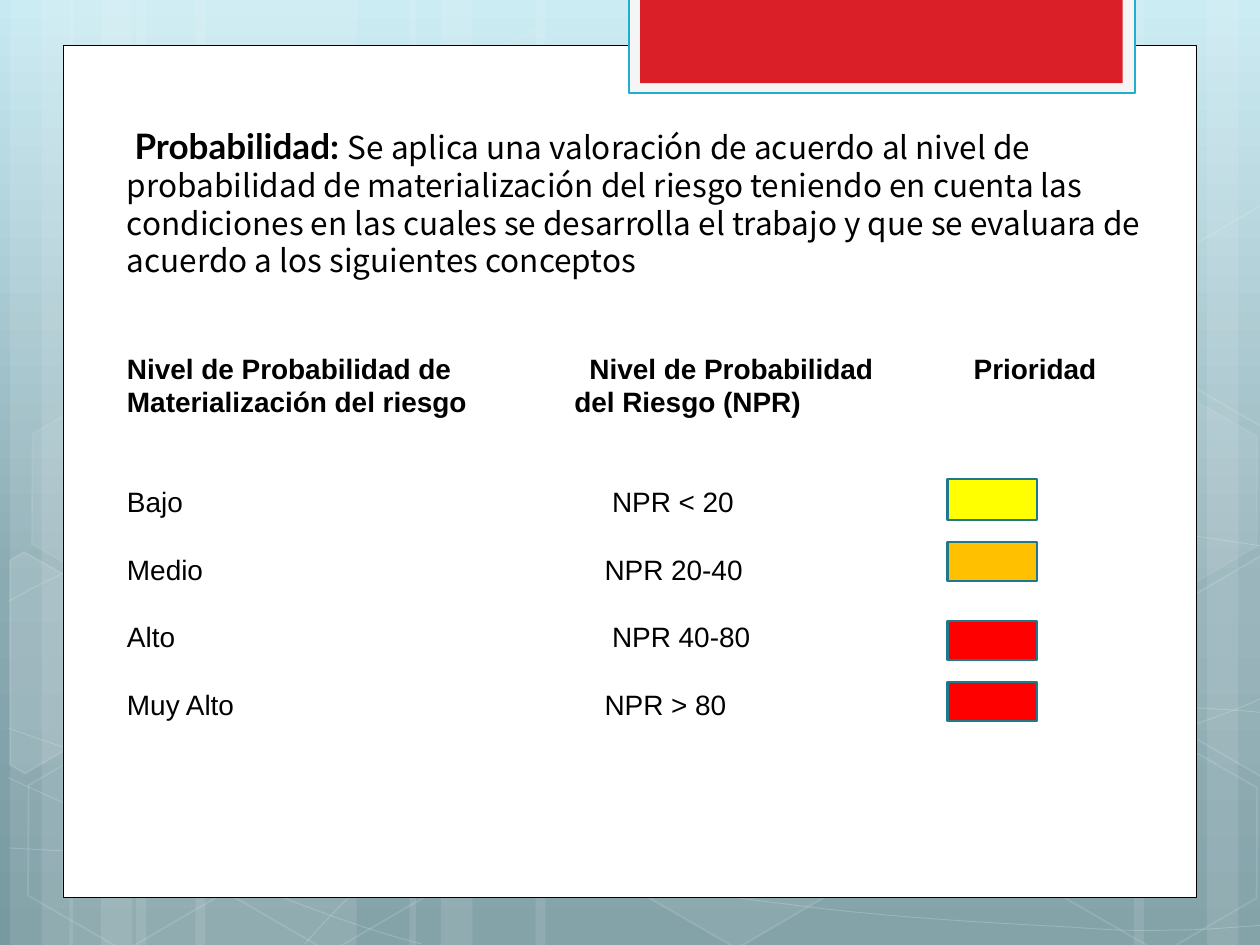
from copy import deepcopy
from typing import NamedTuple, Optional

from lxml import etree
from pptx import Presentation
from pptx.dml.color import RGBColor
from pptx.enum.shapes import MSO_SHAPE
from pptx.oxml.ns import qn
from pptx.util import Inches, Pt

RECTANGLE = MSO_SHAPE.RECTANGLE
HEXAGON = MSO_SHAPE.HEXAGON

WHITE = RGBColor(0xFF, 0xFF, 0xFF)
BLACK = RGBColor(0, 0, 0)
LIGHT_GRAY = RGBColor(0xF5, 0xF5, 0xF5)
CYAN = RGBColor(0x1F, 0xAE, 0xCD)
TEAL = RGBColor(0x21, 0x78, 0x8D)
CRIMSON = RGBColor(0xDA, 0x1F, 0x28)
YELLOW = RGBColor(0xFF, 0xFF, 0)
AMBER = RGBColor(0xFF, 0xC0, 0)
RED = RGBColor(0xFF, 0, 0)
BACKGROUND_STOPS = [
    (0, RGBColor(0xC7, 0xEA, 0xF2)),
    (0.62, RGBColor(0x8B, 0xAB, 0xB3)),
    (1, RGBColor(0x77, 0x99, 0xA0)),
]


class Paint(NamedTuple):
    fill: Optional[RGBColor] = None
    fill_opacity: int = 100
    line: Optional[RGBColor] = None
    line_width: float = 1
    line_opacity: int = 100


class Box(NamedTuple):
    left: float
    top: float
    width: float
    height: float
    paint: Paint


class Hexagon(NamedTuple):
    left: float
    top: float
    fill_opacity: int
    line_opacity: int


class CutHexagon(NamedTuple):
    points: list
    fill_opacity: int


class Row(NamedTuple):
    cells: tuple
    tabs: tuple
    space_before: float
    bold: bool = False


BAR_PAINT = Paint(WHITE, 10)
BARS = [
    (1.08, 1.75), (0.08, 0.5), (0.33, 0.83), (1.55, 1.75), (0.55, 0.5), (0.8, 0.83),
    (7.33, 1.75), (9.58, 0.5), (9, 0.83), (4.25, 3.08), (3.25, 0.5), (3.5, 0.83),
]
CURVE_PAINT = Paint(line=WHITE, line_width=0.5, line_opacity=20)
CURVES = [
    [(0.07, 6.73), (0.61, 6.76), (1.15, 6.79), (1.9, 6.78), (2.65, 6.77), (3.58, 6.75),
     (4.58, 6.65), (5.58, 6.55), (7, 6.36), (7.92, 6.17), (8.83, 5.98), (9.77, 5.68),
     (10.07, 5.51)],
    [(0.07, 4.77), (0.36, 4.61), (0.65, 4.46), (1.21, 4.31), (1.78, 4.16), (2.59, 3.94),
     (3.47, 3.87), (4.36, 3.8), (5.44, 3.79), (6.54, 3.87), (7.64, 3.95), (9.47, 4.26),
     (10.07, 4.34)],
    [(0.06, 6.17), (1.27, 6.72), (2.47, 7.27), (3.34, 7.49)],
    [(0.07, 5.78), (0.38, 5.89), (0.7, 6), (1.28, 6.16), (1.86, 6.31), (2.73, 6.56),
     (3.57, 6.73), (4.4, 6.9), (5.45, 7.08), (6.28, 7.18), (7.11, 7.29), (8, 7.33),
     (8.53, 7.36), (9.05, 7.4), (9.19, 7.38), (9.45, 7.38), (9.71, 7.37), (9.89, 7.35),
     (10.07, 7.34)],
    [(2.42, 7.49), (2.6, 7.29), (2.78, 7.09), (3.02, 6.91), (3.26, 6.73), (3.6, 6.53),
     (3.88, 6.39), (4.16, 6.25), (4.33, 6.19), (4.7, 6.09), (5.06, 5.99), (5.73, 5.85),
     (6.08, 5.78), (6.44, 5.71), (6.49, 5.71), (6.8, 5.69), (7.11, 5.66), (7.6, 5.63),
     (7.94, 5.62), (8.29, 5.61), (8.86, 5.62), (8.86, 5.62), (9.08, 5.62), (9.31, 5.62),
     (9.53, 5.62), (9.71, 5.63), (9.88, 5.64), (10.06, 5.66)],
]
HEXAGONS = [
    Hexagon(3.34, 0.36, 4, 8), Hexagon(4.97, 5.89, 6, 12), Hexagon(0.11, 5.91, 0, 12),
    Hexagon(0.14, 3.12, 7, 8), Hexagon(1.74, 5.92, 0, 12), Hexagon(7.53, 4.53, 10, 12),
    Hexagon(8.34, 5.93, 0, 12), Hexagon(8.34, 3.14, 7, 8),
]
CUT_HEXAGONS = [
    CutHexagon([(0.08, 4.45), (0.19, 4.38), (0.96, 4.82), (0.95, 5.7), (0.2, 6.14),
                (0.08, 6.07)], 10),
    CutHexagon([(9.26, 4.85), (10.01, 4.41), (10.09, 4.46), (10.09, 6.13), (10.02, 6.17),
                (9.26, 5.73)], 4),
    CutHexagon([(9.26, 2.07), (10.01, 1.63), (10.1, 1.68), (10.09, 3.35), (10.02, 3.39),
                (9.26, 2.95)], 0),
]
PANELS = [
    Box(0.5, 0.36, 9, 6.76, Paint(WHITE, line=BLACK, line_width=0.5)),
    Box(4.99, -0.02, 4.02, 0.76, Paint(LIGHT_GRAY, line=CYAN, line_width=1.25)),
    Box(5.08, -0.02, 3.83, 0.68, Paint(CRIMSON)),
]
PRIORITIES = [(3.8, 0.33, YELLOW), (4.3, 0.31, AMBER), (4.93, 0.31, RED), (5.41, 0.31, RED)]
INTRO = [
    ("Probabilidad: ", "Lato", 20, True),
    ("Se aplica una valoración de acuerdo al nivel de probabilidad de materialización del "
     "riesgo teniendo en cuenta las condiciones en las cuales se desarrolla el trabajo y que "
     "se evaluara de acuerdo a los siguientes conceptos", "Noto Sans CJK KR", 18, False),
]
ROWS = [
    Row(("Nivel de Probabilidad de", "Nivel de Probabilidad", "Prioridad"),
        (3.67, 6.72), 41.2, True),
    Row(("Materialización del riesgo", "del Riesgo (NPR)"), (3.55,), 0, True),
    Row(("Bajo", "NPR < 20"), (3.85,), 38),
    Row(("Medio", "NPR 20-40"), (3.79,), 19.25),
    Row(("Alto", "NPR 40-80"), (3.85,), 19.25),
    Row(("Muy Alto", "NPR > 80"), (3.79,), 19.25),
]


def set_opacity(parent, percent: int) -> None:
    if percent < 100:
        color = parent.find(qn("a:solidFill")).find(qn("a:srgbClr"))
        etree.SubElement(color, qn("a:alpha")).set("val", str(percent * 1000))


def apply_paint(shape, paint: Paint) -> None:
    shape.shadow.inherit = False
    properties = shape._element.spPr
    if paint.fill is None or paint.fill_opacity == 0:
        shape.fill.background()
    else:
        shape.fill.solid()
        shape.fill.fore_color.rgb = paint.fill
        set_opacity(properties, paint.fill_opacity)
    if paint.line is None:
        shape.line.fill.background()
    else:
        shape.line.color.rgb = paint.line
        shape.line.width = Pt(paint.line_width)
        set_opacity(properties.find(qn("a:ln")), paint.line_opacity)


def draw_box(slide, box: Box, preset=RECTANGLE):
    shape = slide.shapes.add_shape(preset, *(Inches(length) for length in box[:4]))
    apply_paint(shape, box.paint)
    return shape


def draw_outline(slide, points: list, paint: Paint, close: bool):
    corners = [(Inches(x), Inches(y)) for x, y in points]
    builder = slide.shapes.build_freeform(*corners[0], scale=1.0)
    builder.add_line_segments(corners[1:], close=close)
    shape = builder.convert_to_shape()
    apply_paint(shape, paint)
    return shape


def draw_curve(slide, controls: list) -> None:
    shape = draw_outline(slide, controls, CURVE_PAINT, False)
    segments = list(shape._element.iter(qn("a:lnTo")))
    for start in range(0, len(segments), 3):
        outline = segments[start].getparent()
        curve = etree.SubElement(outline, qn("a:cubicBezTo"))
        for segment in segments[start:start + 3]:
            curve.append(segment[0])
            outline.remove(segment)


def fill_background(master) -> None:
    fill = master.background.fill
    fill.gradient()
    fill.gradient_angle = 270
    stop_list = master.element.find(".//" + qn("a:gsLst"))
    stop_list.append(deepcopy(stop_list[-1]))
    for stop, (position, color) in zip(fill.gradient_stops, BACKGROUND_STOPS):
        stop.position = position
        stop.color.rgb = color


def draw_decoration(slide) -> None:
    for left, width in BARS:
        draw_box(slide, Box(left, 0, width, 7.5, BAR_PAINT))
    for curve in CURVES:
        draw_curve(slide, curve)
    for hexagon in HEXAGONS:
        paint = Paint(WHITE, hexagon.fill_opacity, WHITE, 1, hexagon.line_opacity)
        shape = draw_box(slide, Box(hexagon.left, hexagon.top, 1.75, 1.52, paint), HEXAGON)
        shape.adjustments[0] = 0.285
        shape.rotation = 30
    for hexagon in CUT_HEXAGONS:
        paint = Paint(WHITE, hexagon.fill_opacity, WHITE, 1, 12)
        draw_outline(slide, hexagon.points, paint, True)
    for panel in PANELS:
        draw_box(slide, panel)


def move_to_master(slide, master) -> None:
    for number, shape in enumerate(list(slide.shapes), start=100):
        shape._element.nvSpPr.cNvPr.set("id", str(number))
        master.shapes._spTree.append(shape._element)


def format_run(run, font: str, size: float, bold: bool) -> None:
    run.font.name, run.font.size, run.font.bold = font, Pt(size), bold
    run.font.color.rgb = BLACK


def write_row(paragraph, row: Row) -> None:
    paragraph.text = "\t".join(row.cells)
    paragraph.line_spacing = Pt(19.25)
    paragraph.space_before = Pt(row.space_before)
    tab_list = etree.SubElement(paragraph._p.get_or_add_pPr(), qn("a:tabLst"))
    for position in row.tabs:
        etree.SubElement(tab_list, qn("a:tab"), pos=str(Inches(position)), algn="l")
    for run in paragraph.runs:
        format_run(run, "Arial", 16, row.bold)


def draw_text(slide) -> None:
    text_box = slide.shapes.add_textbox(Inches(0.91), Inches(0.94), Inches(8.27), Inches(5.72))
    text_frame = text_box.text_frame
    text_frame.word_wrap = True
    text_frame.margin_top = Inches(0.08)
    intro = text_frame.paragraphs[0]
    intro.line_spacing = Pt(21.5)
    intro._p.get_or_add_pPr().set("indent", str(Inches(0.06)))
    for text, font, size, bold in INTRO:
        run = intro.add_run()
        run.text = text
        format_run(run, font, size, bold)
    for row in ROWS:
        write_row(text_frame.add_paragraph(), row)


def main() -> None:
    presentation = Presentation()
    presentation.slide_width, presentation.slide_height = Inches(10), Inches(7.5)
    master = presentation.slide_master
    slide = presentation.slides.add_slide(presentation.slide_layouts[6])
    fill_background(master)
    draw_decoration(slide)
    move_to_master(slide, master)
    draw_text(slide)
    for top, height, color in PRIORITIES:
        draw_box(slide, Box(7.52, top, 0.71, height, Paint(color, line=TEAL, line_width=1.25)))
    presentation.save("out.pptx")


if __name__ == "__main__":
    main()
